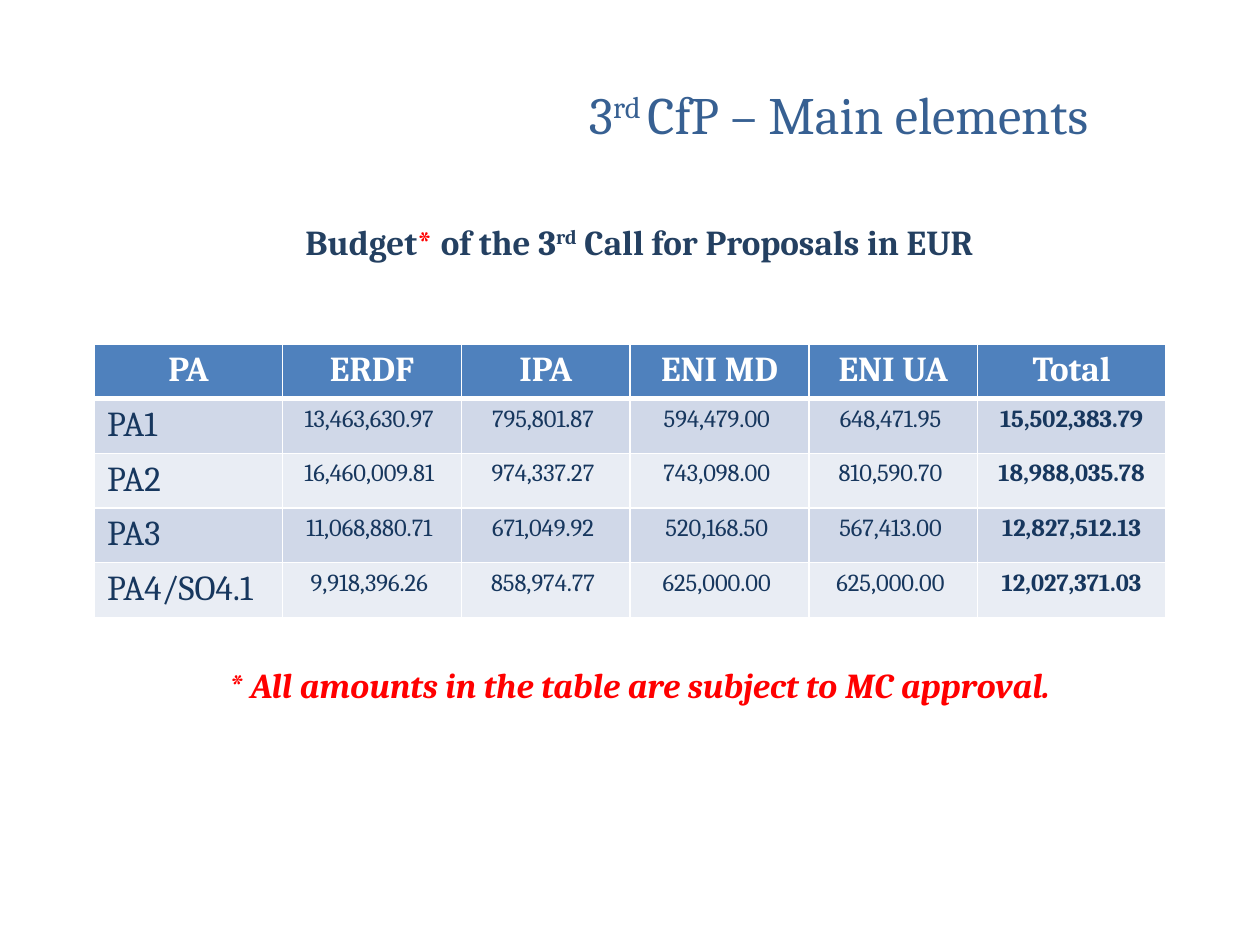
from pptx import Presentation
from pptx import util as u
from pptx.dml import color
from pptx.enum import text
from pptx.oxml import ns, parse_xml

WHITE, RED = "FFFFFF", "FF0000"
TITLE_BLUE, NAVY, TABLE_TEXT = "376092", "244061", "17375E"
HEADER_FILL, BANDS = "4F81BD", ("D0D8E8", "E9EDF4")


def rgb(value):
    return color.RGBColor.from_string(value)


class SlideBuilder:
    font_name = "Cambria"

    def __init__(self, slide):
        self.slide = slide

    def style(self, font, size, colour, bold=False, italic=False):
        font.name = self.font_name
        font.size = u.Pt(size)
        font.bold = bold
        font.italic = italic
        font.color.rgb = rgb(colour)

    def text_box(self, left, top, width, height, runs, size, bold=False, italic=False):
        """Add one centred line; runs are (wording, colour, superscript)."""
        shape = self.slide.shapes.add_textbox(
            u.Pt(left), u.Pt(top), u.Pt(width), u.Pt(height))
        shape.text_frame.word_wrap = True
        paragraph = shape.text_frame.paragraphs[0]
        paragraph.alignment = text.PP_ALIGN.CENTER
        for wording, colour, superscript in runs:
            run = paragraph.add_run()
            run.text = wording
            self.style(run.font, size, colour, bold, italic)
            if superscript:
                run._r.get_or_add_rPr().set("baseline", "30000")

    def border(self, cell, side, width):
        """Add a white border; call before the cell gets its fill."""
        cell._tc.get_or_add_tcPr().append(parse_xml(
            f'<a:{side} {ns.nsdecls("a")} w="{u.Pt(width)}"><a:solidFill>'
            f'<a:srgbClr val="{WHITE}"/></a:solidFill></a:{side}>'))

    def cell(self, cell, wording, row, column, last_column):
        header, label = row == 0, column == 0
        for side in ("lnL", "lnR", "lnT", "lnB"):
            heavy = (row, side) in ((0, "lnB"), (1, "lnT"))
            self.border(cell, side, 3 if heavy else 1)
        cell.fill.solid()
        cell.fill.fore_color.rgb = rgb(HEADER_FILL if header else BANDS[(row - 1) % 2])
        cell.text_frame.text = wording
        paragraph = cell.text_frame.paragraphs[0]
        if header or not label:
            paragraph.alignment = text.PP_ALIGN.CENTER
        self.style(paragraph.runs[0].font, 20 if header or label else 14,
                   WHITE if header else TABLE_TEXT,
                   bold=header or column == last_column)

    def table(self, left, top, widths, row_height, rows):
        table = self.slide.shapes.add_table(
            len(rows), len(widths), u.Pt(left), u.Pt(top),
            u.Pt(sum(widths)), u.Pt(row_height * len(rows))).table
        for column, width in zip(table.columns, widths):
            column.width = u.Pt(width)
        for r, values in enumerate(rows):
            table.rows[r].height = u.Pt(row_height)
            for c, wording in enumerate(values):
                self.cell(table.cell(r, c), wording, r, c, len(widths) - 1)


def main():
    presentation = Presentation()
    presentation.slide_width, presentation.slide_height = u.Pt(720), u.Pt(540)
    builder = SlideBuilder(presentation.slides.add_slide(presentation.slide_layouts[6]))

    # Heading of the table
    builder.text_box(36.7, 122.4, 657.4, 36, [
        ("Budget", NAVY, False), ("*", RED, False), (" of the 3", NAVY, False),
        ("rd", NAVY, True), (" Call for Proposals in EUR", NAVY, False)], 20, bold=True)

    # Budget table: the total of each row is the sum of its funds
    budget = {
        "PA1": (13463630.97, 795801.87, 594479, 648471.95),
        "PA2": (16460009.81, 974337.27, 743098, 810590.70),
        "PA3": (11068880.71, 671049.92, 520168.50, 567413),
        "PA4/SO4.1": (9918396.26, 858974.77, 625000, 625000),
    }
    rows = [["PA", "ERDF", "IPA", "ENI MD", "ENI UA", "Total"]]
    for area, funds in budget.items():
        rows.append([area, *(f"{fund:,.2f} " for fund in funds), f"{sum(funds):,.2f}"])
    builder.table(54, 196.6, (107.5, 102.2, 96.4, 102.2, 96.4, 107.5), 29.5, rows)

    # Footnote
    builder.text_box(36.7, 375.5, 657.4, 36, [
        ("* All amounts in the table are subject to MC approval.", RED, False)],
        20, bold=True, italic=True)

    # Slide title
    builder.text_box(272.2, 43.2, 414, 56.9, [
        ("3", TITLE_BLUE, False), ("rd ", TITLE_BLUE, True),
        ("CfP – Main elements", TITLE_BLUE, False)], 30)

    presentation.save("out.pptx")


if __name__ == "__main__":
    main()
